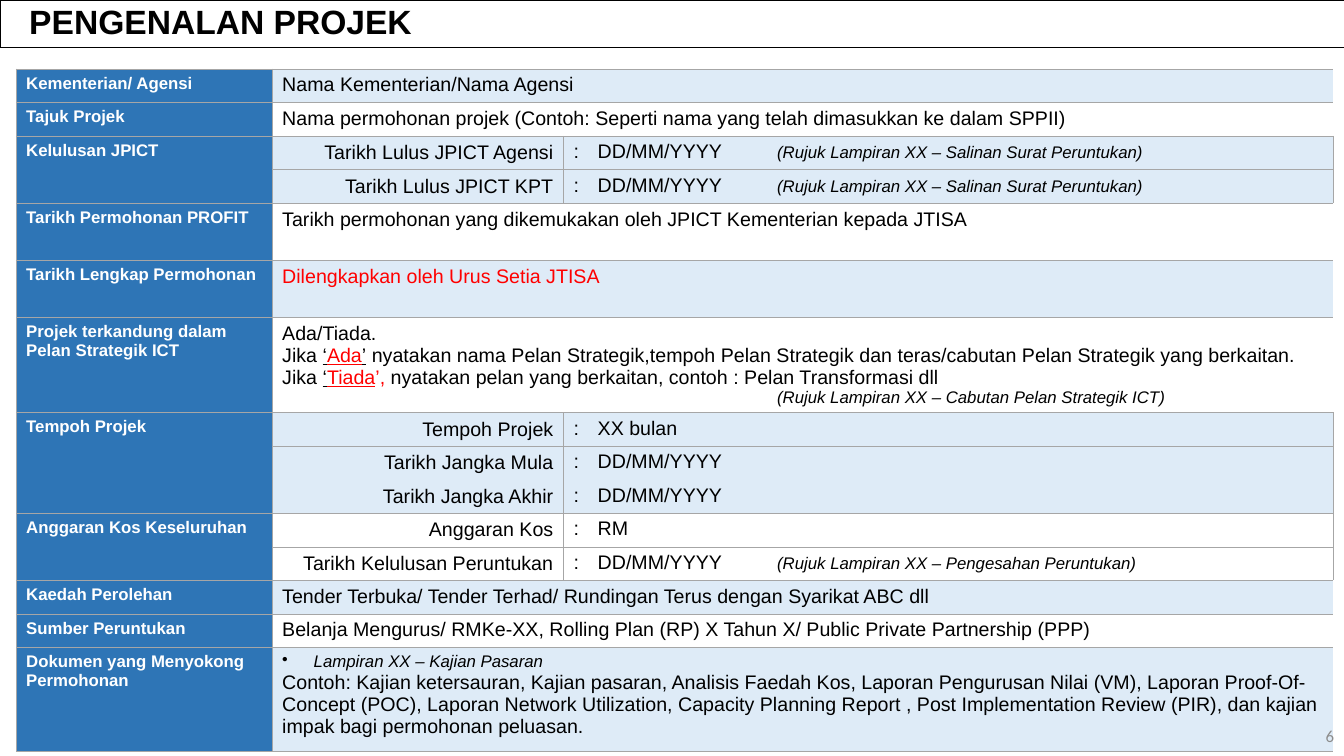
"""Build the project introduction slide with its details table."""
import pptx
import pptx.util
import pptx.dml.color
import pptx.enum.text
import pptx.oxml
import pptx.oxml.ns

Pt = pptx.util.Pt
ALIGN = pptx.enum.text.PP_ALIGN
ANCHOR = pptx.enum.text.MSO_ANCHOR
NS = pptx.oxml.ns.nsdecls("a")

BODY = {"name": "Arial", "size": Pt(14), "bold": False}
LABEL = {"name": "Arial", "size": Pt(12), "bold": True, "color": "FFFFFF"}
NOTE = {**BODY, "size": Pt(12), "italic": True}
RED = {**BODY, "color": "FF0000"}
LINED = {**BODY, "underline": True}
BOTH = {**RED, "underline": True}
HEAD = {"name": "Arial", "size": Pt(24), "bold": True}
PAGE = {"name": "Calibri", "size": Pt(12), "color": "8C8C8C"}

COLS = [182.9, 208.1, 16.6, 532.4]
STOP = 128.2
DATE = "DD/MM/YYYY"
LETTER = "(Rujuk Lampiran XX – Salinan Surat Peruntukan)"

# Each group: label, row height, paragraphs of a full-width cell, detail rows
GROUPS = [
    ("Kementerian/ Agensi", 24, [[("Nama Kementerian/Nama Agensi", BODY)]], []),
    ("Tajuk Projek", 24,
     [[("Nama permohonan projek (Contoh: Seperti nama yang telah dimasukkan ke dalam SPPII)", BODY)]], []),
    ("Kelulusan JPICT", 24, [],
     [("Tarikh Lulus JPICT Agensi", DATE, LETTER),
      ("Tarikh Lulus JPICT KPT", DATE, LETTER)]),
    ("Tarikh Permohonan PROFIT", 40.8,
     [[("Tarikh permohonan yang dikemukakan oleh JPICT Kementerian kepada JTISA", BODY)]], []),
    ("Tarikh Lengkap Permohonan", 40.8, [[("Dilengkapkan oleh Urus Setia JTISA", RED)]], []),
    ("Projek terkandung dalam Pelan Strategik ICT", 67.2,
     [[("Ada/Tiada.", BODY)],
      [("Jika ", BODY), ("‘", LINED), ("Ada", BOTH), ("’", LINED),
       (" nyatakan nama Pelan Strategik,tempoh Pelan Strategik dan teras/cabutan "
        "Pelan Strategik yang berkaitan.", BODY)],
      [("Jika ", BODY), ("‘", LINED), ("Tiada", BOTH), ("’, ", RED),
       ("nyatakan pelan yang berkaitan, contoh : Pelan Transformasi dll", BODY)],
      [("(Rujuk Lampiran XX – Cabutan Pelan Strategik ICT)", NOTE)]], []),
    ("Tempoh Projek", 24, [],
     [("Tempoh Projek", "XX bulan", ""),
      ("Tarikh Jangka Mula", DATE, ""),
      ("Tarikh Jangka Akhir", DATE, "")]),
    ("Anggaran Kos Keseluruhan", 24, [],
     [("Anggaran Kos", "RM", ""),
      ("Tarikh Kelulusan Peruntukan", DATE, "(Rujuk Lampiran XX – Pengesahan Peruntukan)")]),
    ("Kaedah Perolehan", 24,
     [[("Tender Terbuka/ Tender Terhad/ Rundingan Terus dengan Syarikat ABC dll", BODY)]], []),
    ("Sumber Peruntukan", 24,
     [[("Belanja Mengurus/ RMKe-XX, Rolling Plan (RP) X Tahun X/ "
        "Public Private Partnership (PPP)", BODY)]], []),
    ("Dokumen yang Menyokong Permohonan", 74.2,
     [[("Lampiran XX – Kajian Pasaran", NOTE)],
      [("Contoh: Kajian ketersauran, Kajian pasaran, Analisis Faedah Kos, Laporan Pengurusan "
        "Nilai (VM), Laporan Proof-Of-Concept (POC), Laporan Network Utilization, Capacity "
        "Planning Report , Post Implementation Review (PIR), dan kajian impak bagi permohonan "
        "peluasan.", BODY)]], []),
]


def paint(code):
    return pptx.dml.color.RGBColor.from_string(code)


def write(frame, paras):
    for i, parts in enumerate(paras):
        para = frame.add_paragraph() if i else frame.paragraphs[0]
        for text, style in parts:
            run = para.add_run()
            run.text = text
            for key, value in style.items():
                if key != "color":
                    setattr(run.font, key, value)
            run.font.color.rgb = paint(style.get("color", "000000"))


deck = pptx.Presentation()
deck.slide_width, deck.slide_height = Pt(960), Pt(540)
slide = deck.slides.add_slide(deck.slide_layouts[5])

title = slide.shapes.title
place = {"left": Pt(0), "top": Pt(0), "width": Pt(961), "height": Pt(34)}
for key, value in place.items():
    setattr(title, key, value)
title.line.color.rgb = paint("000000")
title.line.width = Pt(0.75)
frame = title.text_frame
frame.auto_size = pptx.enum.text.MSO_AUTO_SIZE.NONE
frame.vertical_anchor = ANCHOR.MIDDLE
write(frame, [[("PENGENALAN PROJEK", HEAD)]])
para = frame.paragraphs[0]
para.alignment = ALIGN.LEFT
para.line_spacing = 0.9
para._p.get_or_add_pPr().set("marL", str(Pt(13.7)))

count = sum(len(rows) or 1 for _, _, _, rows in GROUPS)
holder = slide.shapes.add_table(count, 4, Pt(11.5), Pt(49.2), Pt(sum(COLS)), Pt(487))
table = holder.table
table.first_row = table.horz_banding = False
table._tbl.tblPr.find(pptx.oxml.ns.qn("a:tableStyleId")).text = "{2D5ABB26-0587-4C30-8999-92F81FD0307C}"
for col, width in zip(table.columns, COLS):
    col.width = Pt(width)

first = 0
for index, (label, height, paras, rows) in enumerate(GROUPS):
    last = first + max(len(rows), 1) - 1
    for r in range(first, last + 1):
        table.rows[r].height = Pt(height)
        for c in range(4):
            cell = table.cell(r, c)
            sides = {"L": c < 2, "R": c in (0, 3), "T": r == first, "B": r == last}
            for side, shown in sides.items():
                if shown:
                    cell._tc.get_or_add_tcPr().append(pptx.oxml.parse_xml(
                        f'<a:ln{side} {NS} w="{Pt(0.25)}"><a:solidFill>'
                        f'<a:srgbClr val="A6A6A6"/></a:solidFill></a:ln{side}>'))
            cell.fill.solid()
            shade = "FFFFFF" if index % 2 else "DEEBF7"
            cell.fill.fore_color.rgb = paint(shade if c else "2E75B6")
    if last > first:
        table.cell(first, 0).merge(table.cell(last, 0))
    write(table.cell(first, 0).text_frame, [[(label, LABEL)]])
    if paras:
        table.cell(first, 1).merge(table.cell(first, 3))
        write(table.cell(first, 1).text_frame, paras)
    for r, (name, value, note) in enumerate(rows, first):
        cell = table.cell(r, 1)
        cell.vertical_anchor = ANCHOR.MIDDLE
        write(cell.text_frame, [[(name, BODY)]])
        cell.text_frame.paragraphs[0].alignment = ALIGN.RIGHT
        write(table.cell(r, 2).text_frame, [[(":", BODY)]])
        frame = table.cell(r, 3).text_frame
        write(frame, [[(value + "\t", BODY), (note, NOTE)] if note else [(value, BODY)]])
        if note:
            frame.paragraphs[0]._p.get_or_add_pPr().append(pptx.oxml.parse_xml(
                f'<a:tabLst {NS}><a:tab pos="{Pt(STOP)}" algn="l"/></a:tabLst>'))
    first = last + 1

plan = table.cell(7, 1).text_frame.paragraphs[3]._p.get_or_add_pPr() if count < 15 else \
    table.cell(6, 1).text_frame.paragraphs[3]._p.get_or_add_pPr()
plan.set("indent", str(Pt(353.5)))
point = table.cell(count - 1, 1).text_frame.paragraphs[0]._p.get_or_add_pPr()
point.set("marL", str(Pt(22.5)))
point.set("indent", str(Pt(-22.5)))
point.append(pptx.oxml.parse_xml(f'<a:buChar {NS} char="•"/>'))

page = slide.shapes.add_textbox(Pt(744), Pt(511), Pt(216), Pt(29)).text_frame
page.word_wrap = True
page.vertical_anchor = ANCHOR.MIDDLE
write(page, [[("6", PAGE)]])
page.paragraphs[0].alignment = ALIGN.RIGHT
deck.save("out.pptx")
